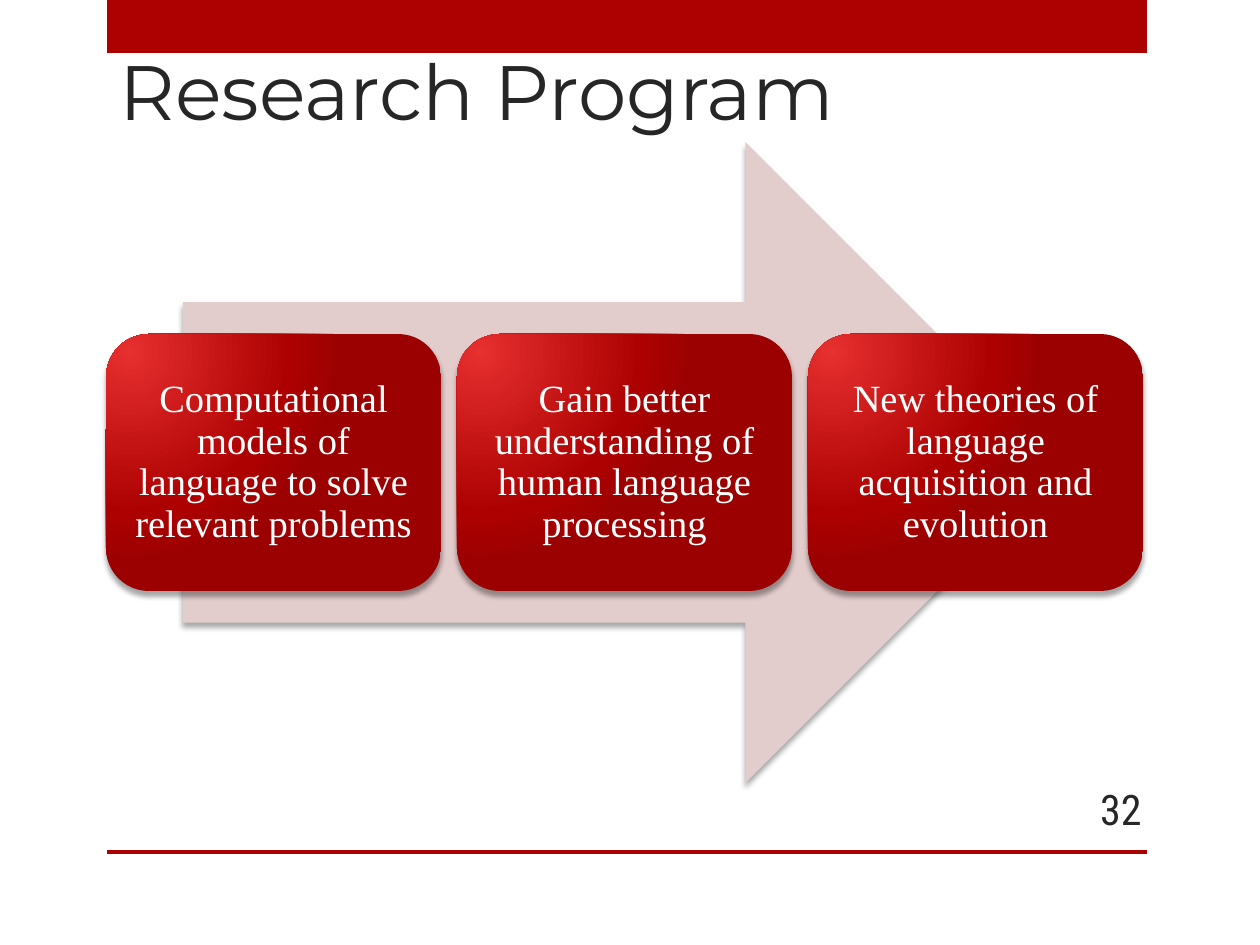
"""Build the Research Program slide: three boxes along a wide arrow."""
import pptx
import pptx.util
import pptx.dml.color
import pptx.enum.shapes
import pptx.enum.text
import pptx.oxml

PX = 914400 // 126
NS = 'xmlns:a="http://schemas.openxmlformats.org/drawingml/2006/main"'
SHADOW = f'''<a:effectLst {NS}><a:outerShdw blurRad="38100" dist="38100" dir="5400000"
 rotWithShape="0"><a:srgbClr val="000000"><a:alpha val="35000"/></a:srgbClr>
 </a:outerShdw></a:effectLst>'''
STOPS = "".join(f'<a:gs pos="{pos}000"><a:srgbClr val="{c}"/></a:gs>'
                for pos, c in [(0, "E62F2F"), (76, "AD0101"), (100, "9C0101")])
GRADIENT = f'''<a:gradFill {NS} rotWithShape="1"><a:gsLst>{STOPS}</a:gsLst>
 <a:path path="circle"><a:fillToRect l="15000" t="15000" r="100000" b="100000"/></a:path>
 </a:gradFill>'''
SHAPE = pptx.enum.shapes.MSO_SHAPE
ANCHOR = pptx.enum.text.MSO_ANCHOR
ALIGN = pptx.enum.text.PP_ALIGN


def color(value):
    return pptx.dml.color.RGBColor.from_string(value)


def write(sp, text, size, font, value, anchor, align):
    tf = sp.text_frame
    tf.word_wrap = True
    tf.vertical_anchor = anchor
    p = tf.paragraphs[0]
    p.alignment = align
    r = p.add_run()
    r.text = text
    r.font.size = pptx.util.Pt(size)
    r.font.name = font
    r.font.color.rgb = color(value)
    return tf


prs = pptx.Presentation()
prs.slide_width = pptx.util.Inches(10)
prs.slide_height = pptx.util.Inches(7.5)
s = prs.slides.add_slide(prs.slide_layouts[6])

for top, height in [(0, 53), (850, 4)]:
    sp = s.shapes.add_shape(SHAPE.RECTANGLE, 107 * PX, top * PX, 1040 * PX, height * PX)
    sp.shadow.inherit = False
    sp.fill.solid()
    sp.fill.fore_color.rgb = color("AD0101")
    sp.line.fill.background()

sp = s.shapes.add_textbox(107 * PX, 16 * PX, 935 * PX, 126 * PX)
write(sp, "Research Program", 44, "Montserrat", "262626", ANCHOR.BOTTOM, ALIGN.LEFT)

sp = s.shapes.add_shape(SHAPE.RIGHT_ARROW, 183 * PX, 142 * PX, 883 * PX, 641 * PX)
sp.fill.solid()
sp.fill.fore_color.rgb = color("E3CCCC")
sp.line.fill.background()
sp._element.spPr.append(pptx.oxml.parse_xml(SHADOW))

steps = [
    "Computational models of language to solve relevant problems",
    "Gain better understanding of human language processing",
    "New theories of language acquisition and evolution",
]
for i, step in enumerate(steps):
    sp = s.shapes.add_shape(SHAPE.ROUNDED_RECTANGLE, (106 + 351 * i) * PX, 334 * PX, 335 * PX, 257 * PX)
    sp.line.fill.background()
    spPr = sp._element.spPr
    spPr.insert(2, pptx.oxml.parse_xml(GRADIENT))
    spPr.append(pptx.oxml.parse_xml(SHADOW))
    tf = write(sp, step, 22, "Times New Roman", "FFFFFF", ANCHOR.MIDDLE, ALIGN.CENTER)
    tf.margin_left = tf.margin_right = tf.margin_top = tf.margin_bottom = 11 * PX
    tf.paragraphs[0].line_spacing = 0.9

sp = s.shapes.add_textbox(1050 * PX, 784 * PX, 104 * PX, 50 * PX)
write(sp, "32", 24, "Roboto Condensed", "262626", ANCHOR.MIDDLE, ALIGN.RIGHT)

prs.save("out.pptx")
